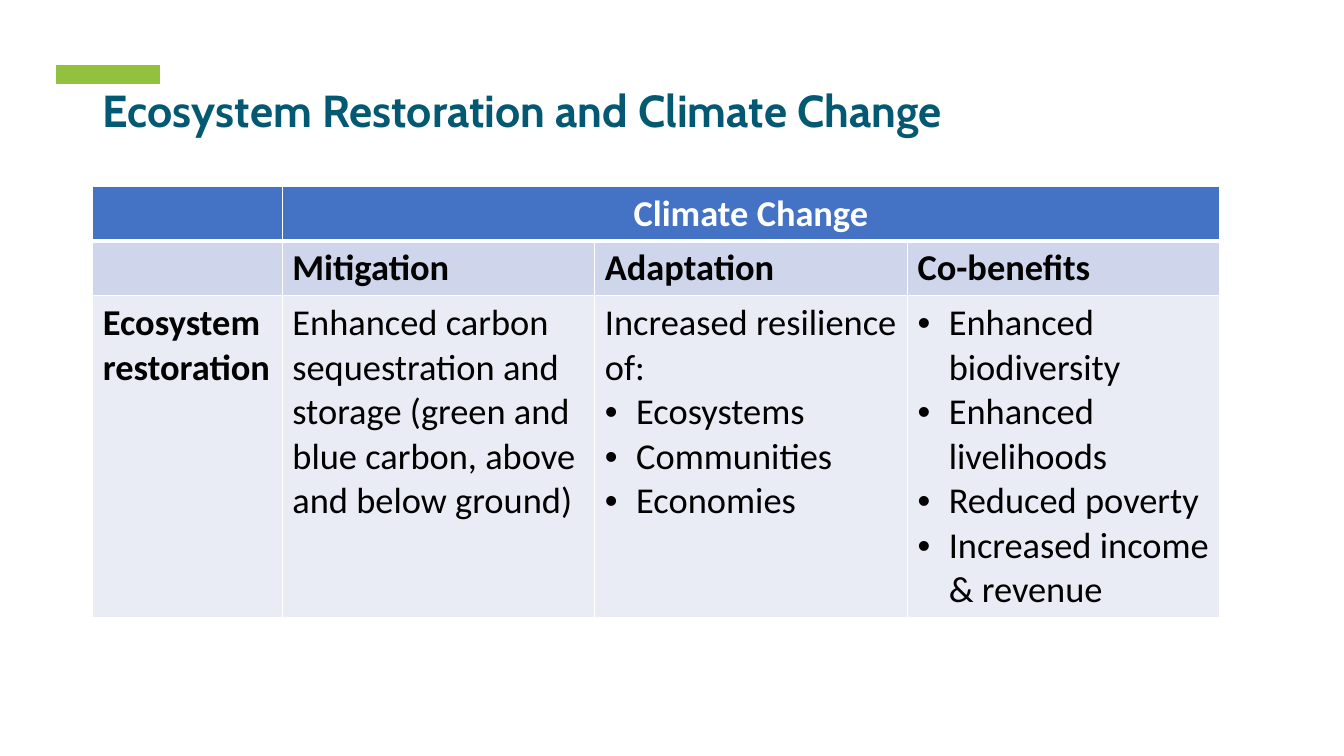
from lxml.etree import SubElement
from pptx import Presentation
from pptx.dml.color import RGBColor
from pptx.enum.shapes import MSO_CONNECTOR
from pptx.enum.text import MSO_ANCHOR, MSO_AUTO_SIZE, PP_ALIGN
from pptx.oxml import parse_xml
from pptx.oxml.ns import nsdecls, qn
from pptx.util import Inches, Pt

BULLET = "•"
COL_WIDTHS = [1.88, 3.1, 3.1, 3.1]
ROW_HEIGHTS = [0.53, 0.54, 3.19]
ROW_FILLS = ["4472C4", "CFD5EA", "E9EBF5"]
ROWS = [
    [[], ["Climate Change"], [], []],
    [[], ["Mitigation"], ["Adaptation"], ["Co-benefits"]],
    [
        ["Ecosystem restoration"],
        ["Enhanced carbon sequestration and storage "
         "(green and blue carbon, above and below ground)"],
        ["Increased resilience of:", "•Ecosystems", "•Communities", "•Economies"],
        ["•Enhanced biodiversity", "•Enhanced livelihoods", "•Reduced poverty",
         "•Increased income & revenue"],
    ],
]


def color(value):
    """Turn a hex string into a colour."""
    return RGBColor.from_string(value)


def format_font(font, value, **formats):
    """Apply a colour and a set of format values to a font."""
    font.color.rgb = color(value)
    for name, setting in formats.items():
        setattr(font, name, setting)


def add_accent(s, left, top, width):
    """Draw the thick green bar above the title."""
    bar = s.shapes.add_connector(
        MSO_CONNECTOR.STRAIGHT, Inches(left), Inches(top),
        Inches(left + width), Inches(top))
    bar.line.color.rgb = color("92C13F")
    bar.line.width = Pt(14)
    SubElement(bar._element.spPr, qn("a:effectLst"))


def add_title(s, text, left, top, width, height):
    """Place and format the title placeholder."""
    sp = s.shapes.title
    box = {"left": left, "top": top, "width": width, "height": height}
    for name, value in box.items():
        setattr(sp, name, Inches(value))
    tf = sp.text_frame
    tf.text = text
    tf.word_wrap = True
    tf.auto_size = MSO_AUTO_SIZE.NONE
    tf.vertical_anchor = MSO_ANCHOR.MIDDLE
    p = tf.paragraphs[0]
    p.alignment = PP_ALIGN.LEFT
    p.line_spacing = 0.9
    format_font(p.runs[0].font, "045972", name="Cabin", size=Pt(32), bold=True)


def set_borders(cell, top, bottom):
    """Give a cell white borders, with top and bottom widths in points."""
    widths = {"lnL": 1, "lnR": 1, "lnT": top, "lnB": bottom}
    tcPr = cell._tc.get_or_add_tcPr()
    for i, (side, width) in enumerate(widths.items()):
        tcPr.insert(i, parse_xml(
            f'<a:{side} {nsdecls("a")} w="{Pt(width)}"><a:solidFill>'
            f'<a:srgbClr val="FFFFFF"/></a:solidFill></a:{side}>'))


def add_bullet(p):
    """Give a paragraph a hanging round bullet."""
    pPr = p._p.get_or_add_pPr()
    pPr.set("marL", str(Inches(0.31)))
    pPr.set("indent", str(-Inches(0.31)))
    SubElement(pPr, qn("a:buFont"), typeface="Arial")
    SubElement(pPr, qn("a:buChar"), char=BULLET)


def fill_cell(cell, lines, text_color, bold, align):
    """Write the lines of a cell, one paragraph each."""
    tf = cell.text_frame
    for i, line in enumerate(lines):
        p = tf.add_paragraph() if i else tf.paragraphs[0]
        if line.startswith(BULLET):
            add_bullet(p)
        p.alignment = align
        r = p.add_run()
        r.text = line.removeprefix(BULLET)
        format_font(r.font, text_color, name="Calibri", size=Pt(26), bold=bold)


def add_climate_table(s, left, top):
    """Build the climate change table from its top left corner."""
    table = s.shapes.add_table(
        len(ROWS), len(COL_WIDTHS), Inches(left), Inches(top),
        Inches(sum(COL_WIDTHS)), Inches(sum(ROW_HEIGHTS))).table
    table.horz_banding = False
    for column, width in zip(table.columns, COL_WIDTHS):
        column.width = Inches(width)
    for i, row in enumerate(ROWS):
        table.rows[i].height = Inches(ROW_HEIGHTS[i])
        header = i == 0
        for j, lines in enumerate(row):
            cell = table.cell(i, j)
            cell.fill.solid()
            cell.fill.fore_color.rgb = color(ROW_FILLS[i])
            set_borders(cell, 3 if i == 1 else 1, 3 if header else 1)
            fill_cell(cell, lines, "FFFFFF" if header else "000000",
                      i < 2 or j == 0,
                      PP_ALIGN.CENTER if header else PP_ALIGN.LEFT)
    table.cell(0, 1).merge(table.cell(0, 3))


def main():
    """Build and save the slide."""
    prs = Presentation()
    prs.slide_width, prs.slide_height = Inches(13.33), Inches(7.5)
    s = prs.slides.add_slide(prs.slide_layouts[5])
    add_accent(s, 0.56, 0.74, 1.03)
    add_title(s, "Ecosystem Restoration and Climate Change",
              0.92, 0.4, 11.68, 1.45)
    add_climate_table(s, 0.92, 1.85)
    prs.save("out.pptx")


if __name__ == "__main__":
    main()
